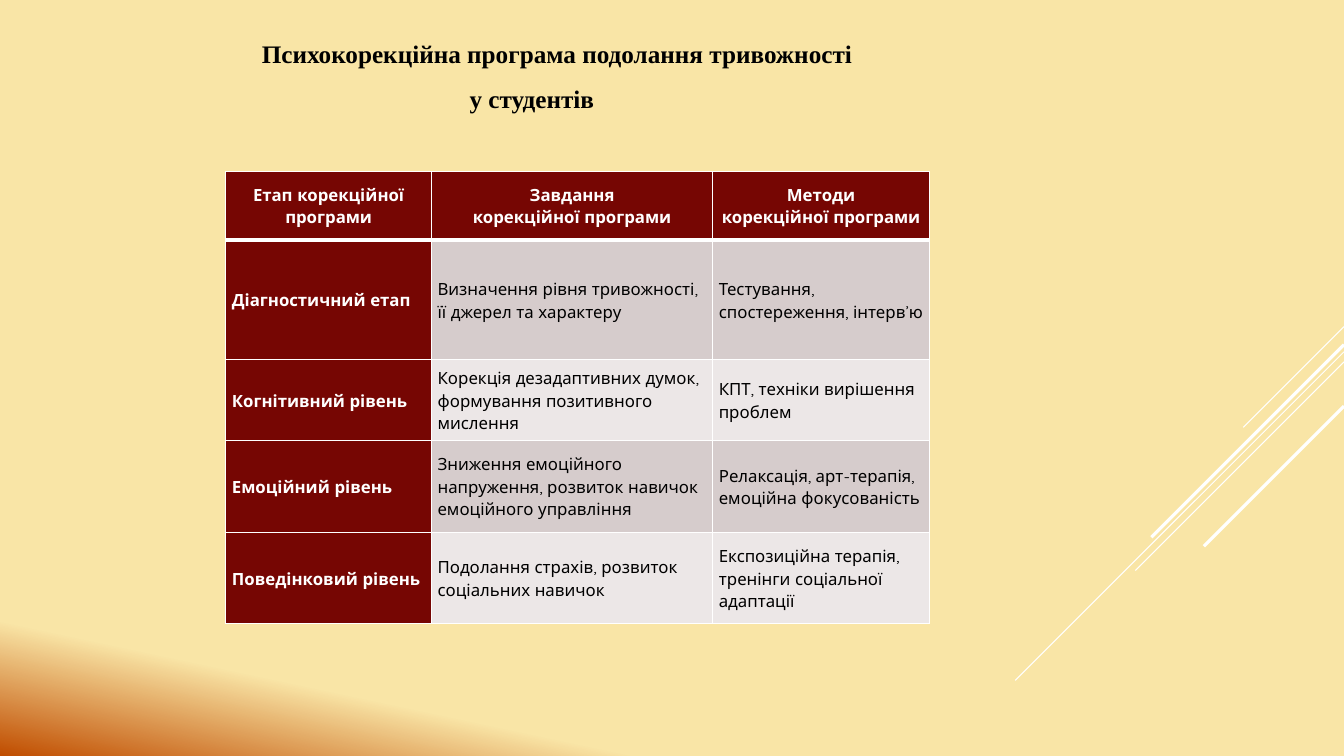
from lxml.etree import SubElement
from pptx import Presentation
from pptx.dml.color import RGBColor
from pptx.enum.shapes import MSO_CONNECTOR
from pptx.enum.text import MSO_ANCHOR, MSO_AUTO_SIZE, PP_ALIGN
from pptx.oxml.ns import qn
from pptx.util import Inches, Pt

TITLE = "Психокорекційна програма подолання тривожності у студентів"
HEADINGS = [
    "Етап корекційної програми",
    "Завдання\nкорекційної програми",
    "Методи\nкорекційної програми",
]
STAGES = [
    ("Діагностичний етап", "Визначення рівня тривожності, її джерел та характеру",
     "Тестування, спостереження, інтерв’ю"),
    ("Когнітивний рівень", "Корекція дезадаптивних думок, формування позитивного мислення",
     "КПТ, техніки вирішення проблем"),
    ("Емоційний рівень", "Зниження емоційного напруження, розвиток навичок емоційного управління",
     "Релаксація, арт-терапія, емоційна фокусованість"),
    ("Поведінковий рівень", "Подолання страхів, розвиток соціальних навичок",
     "Експозиційна терапія, тренінги соціальної адаптації"),
]
COLORS = {
    "sand": "F9E5A6", "rust": "C04D00", "maroon": "760603", "white": "FFFFFF",
    "black": "000000", "dark_band": "D6CCCC", "light_band": "ECE7E7",
}
SLIDE_W, SLIDE_H = 13.33, 7.5
TITLE_BOX = (1.94, 0.18, 6.67, 1.01)
TABLE_LEFT, TABLE_TOP = 2.24, 1.7
COLUMN_WIDTHS = [2.04, 2.79, 2.15]
ROW_HEIGHTS = [0.68, 1.19, 0.8, 0.91, 0.91]
# Diagonals at 45 degrees: height on the right edge, run to the left, line width
DIAGONALS = [(3.24, 1, 0.75), (3.49, 3.26, 0.75), (3.59, 2.07, 0.75),
             (3.42, 1.91, 2.25), (4.03, 1.39, 2.25)]


def rgb(name):
    return RGBColor.from_string(COLORS[name])


def write(frame, text, font="Quicksand", size=12, color="black", bold=False,
          align=PP_ALIGN.LEFT, spacing=1.07, indent=0):
    frame.word_wrap = True
    for number, line in enumerate(text.split("\n")):
        paragraph = frame.add_paragraph() if number else frame.paragraphs[0]
        paragraph.alignment, paragraph.line_spacing = align, spacing
        if indent:
            paragraph._p.get_or_add_pPr().set("indent", str(Inches(indent)))
        run = paragraph.add_run()
        run.text = line
        run.font.name, run.font.size, run.font.bold = font, Pt(size), bold
        run.font.color.rgb = rgb(color)


def add_borders(cell, **widths):
    properties = cell._tc.get_or_add_tcPr()
    for side in "LRTB":
        border = SubElement(properties, qn(f"a:ln{side}"), w=str(Pt(widths.get(side, 1))))
        fill = SubElement(border, qn("a:solidFill"))
        SubElement(fill, qn("a:srgbClr"), val=COLORS["white"])


def main():
    deck = Presentation()
    deck.slide_width, deck.slide_height = Inches(SLIDE_W), Inches(SLIDE_H)
    slide = deck.slides.add_slide(deck.slide_layouts[6])

    # Background: clockwise 102 degrees, given counter-clockwise
    backdrop = slide.background.fill
    backdrop.gradient()
    backdrop.gradient_angle = 360 - 102
    for stop, position, color in zip(backdrop.gradient_stops, (0.87, 1), ("sand", "rust")):
        stop.position, stop.color.rgb = position, rgb(color)

    # Diagonal lines from the right edge
    for top, run, width in DIAGONALS:
        ends = [Inches(value) for value in (SLIDE_W, top, SLIDE_W - run, top + run)]
        diagonal = slide.shapes.add_connector(MSO_CONNECTOR.STRAIGHT, *ends)
        diagonal.line.color.rgb, diagonal.line.width = rgb("white"), Pt(width)
        SubElement(diagonal._element.spPr, qn("a:effectLst"))

    # Programme table
    rows = [HEADINGS, *STAGES]
    programme = slide.shapes.add_table(
        len(rows), len(HEADINGS), Inches(TABLE_LEFT), Inches(TABLE_TOP),
        Inches(sum(COLUMN_WIDTHS)), Inches(sum(ROW_HEIGHTS))).table
    for column, width in zip(programme.columns, COLUMN_WIDTHS):
        column.width = Inches(width)
    for row, height in zip(programme.rows, ROW_HEIGHTS):
        row.height = Inches(height)
    for r, texts in enumerate(rows):
        for c, text in enumerate(texts):
            cell = programme.cell(r, c)
            heading = r == 0 or c == 0
            band = "dark_band" if r % 2 else "light_band"
            add_borders(cell, T=3 if r == 1 else 1, B=3 if r == 0 else 1)
            cell.fill.solid()
            cell.fill.fore_color.rgb = rgb("maroon" if heading else band)
            cell.vertical_anchor = MSO_ANCHOR.MIDDLE
            cell.margin_left = cell.margin_right = Inches(0.06)
            cell.margin_top = cell.margin_bottom = 0
            write(cell.text_frame, text, bold=heading,
                  color="white" if heading else "black",
                  align=PP_ALIGN.LEFT if r else PP_ALIGN.CENTER)

    # Title
    title = slide.shapes.add_textbox(*[Inches(value) for value in TITLE_BOX]).text_frame
    title.auto_size = MSO_AUTO_SIZE.SHAPE_TO_FIT_TEXT
    write(title, TITLE, font="Times New Roman", size=18, bold=True,
          align=PP_ALIGN.CENTER, spacing=1.5, indent=0.5)

    deck.save("out.pptx")


if __name__ == "__main__":
    main()
